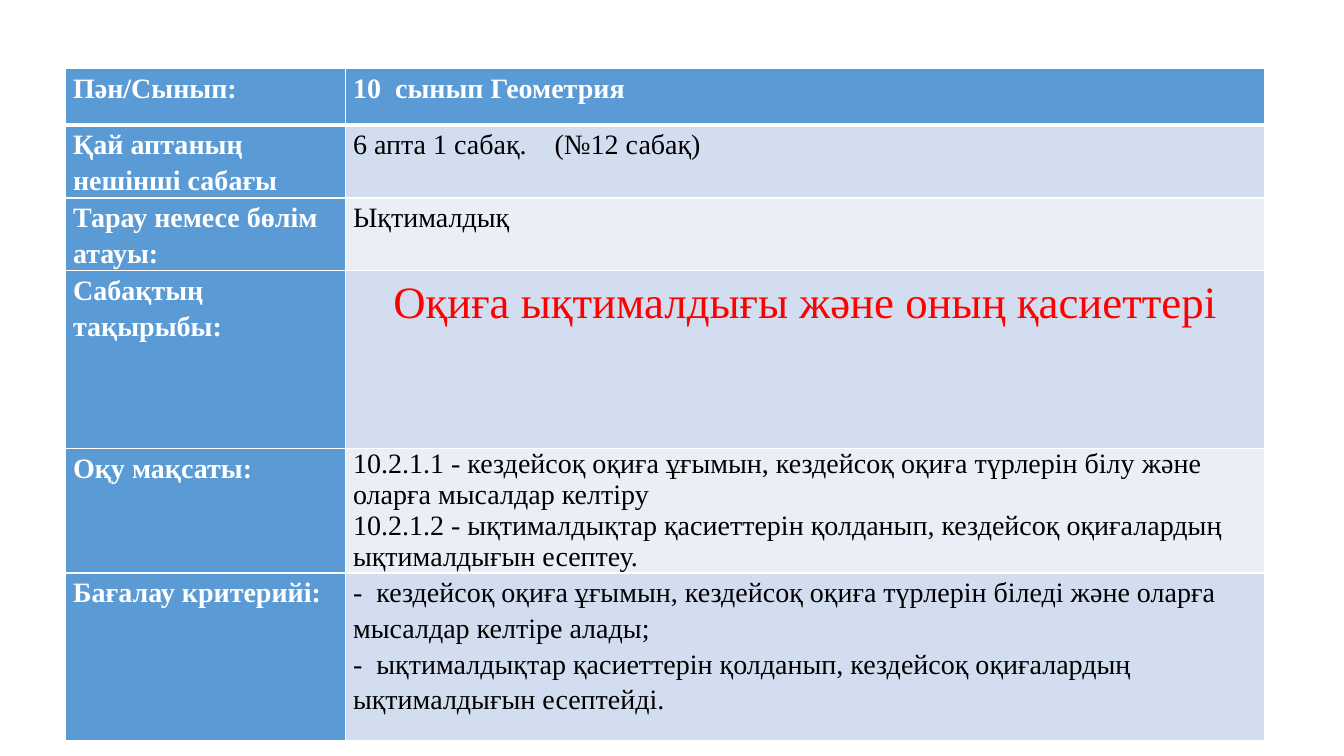
from lxml.etree import SubElement
from pptx import Presentation
from pptx.dml.color import RGBColor
from pptx.enum.text import PP_ALIGN
from pptx.oxml.ns import qn
from pptx.util import Pt

BLUE, WHITE, BLACK, RED = "5B9BD5", "FFFFFF", "000000", "FF0000"
BANDS = ["D2DEEF", "EAEFF7"]
LABEL = dict(bold=True, color=WHITE)
TOPIC = dict(size=32, color=RED, align=PP_ALIGN.CENTER)
ROWS = [
    (40.5, "Пән/Сынып:", ["10  сынып Геометрия"], LABEL),
    (52, "Қай аптаның нешінші сабағы", ["6 апта 1 сабақ.\t(№12 сабақ)"], dict(tab=144)),
    (52, "Тарау немесе бөлім атауы:", ["Ықтималдық"], {}),
    (127, "Сабақтың тақырыбы:", ["Оқиға ықтималдығы және оның қасиеттері"], TOPIC),
    (88.5, "Оқу мақсаты:", [
        "10.2.1.1 - кездейсоқ оқиға ұғымын, кездейсоқ оқиға түрлерін білу және оларға мысалдар келтіру",
        "10.2.1.2 - ықтималдықтар қасиеттерін қолданып, кездейсоқ оқиғалардың ықтималдығын есептеу.",
    ], dict(spacing=1.0)),
    (119.5, "Бағалау критерийі:", [
        "-  кездейсоқ оқиға ұғымын, кездейсоқ оқиға түрлерін біледі және оларға мысалдар келтіре алады;",
        "-  ықтималдықтар қасиеттерін қолданып, кездейсоқ оқиғалардың ықтималдығын есептейді.",
    ], {}),
]


def rgb(value):
    """Turn a hex string into a colour."""
    return RGBColor.from_string(value)


class LessonSlide:
    """Hold the text style and the current slide."""

    font = "Times New Roman"
    margins = dict(margin_left=Pt(5.2), margin_right=Pt(5.2), margin_top=0, margin_bottom=0)

    def __init__(self, prs):
        """Add an empty slide."""
        self.s = prs.slides.add_slide(prs.slide_layouts[6])

    def table(self, left, top, widths, rows):
        """Add the table of labels and contents."""
        height = sum(row[0] for row in rows)
        sp = self.s.shapes.add_table(len(rows), len(widths), Pt(left), Pt(top),
                                     Pt(sum(widths)), Pt(height))
        for column, width in zip(sp.table.columns, widths):
            column.width = Pt(width)
        for i, (height, label, lines, style) in enumerate(rows):
            sp.table.rows[i].height = Pt(height)
            edges = dict(L=1, R=1, T=3 if i == 1 else 1, B=3 if i == 0 else 1)
            fill = BANDS[(i - 1) % 2] if i else BLUE
            self.cell(sp.table.cell(i, 0), [label], BLUE, edges, **LABEL)
            self.cell(sp.table.cell(i, 1), lines, fill, edges, **style)

    def cell(self, cell, lines, fill, edges, **style):
        """Format one cell and write its paragraphs."""
        for name, value in self.margins.items():
            setattr(cell, name, value)
        self.borders(cell, edges)
        cell.fill.solid()
        cell.fill.fore_color.rgb = rgb(fill)
        tf = cell.text_frame
        for i, line in enumerate(lines):
            p = tf.add_paragraph() if i else tf.paragraphs[0]
            self.paragraph(p, line, **style)

    def borders(self, cell, edges):
        """Draw white cell edges with the given widths."""
        tcPr = cell._tc.get_or_add_tcPr()
        for side, width in edges.items():
            ln = SubElement(tcPr, qn(f"a:ln{side}"), w=str(Pt(width)))
            SubElement(SubElement(ln, qn("a:solidFill")), qn("a:srgbClr"), val=WHITE)

    def paragraph(self, p, text, size=20, color=BLACK, bold=False,
                  align=PP_ALIGN.LEFT, spacing=1.15, tab=None):
        """Write one formatted paragraph."""
        p.alignment, p.line_spacing = align, spacing
        if tab:
            stops = SubElement(p._p.get_or_add_pPr(), qn("a:tabLst"))
            SubElement(stops, qn("a:tab"), pos=str(Pt(tab)), algn="l")
        r = p.add_run()
        r.text = text
        for name, value in dict(name=self.font, size=Pt(size), bold=bold).items():
            setattr(r.font, name, value)
        r.font.color.rgb = rgb(color)


def main():
    """Build and save the slide."""
    prs = Presentation()
    prs.slide_width, prs.slide_height = Pt(960), Pt(540)
    LessonSlide(prs).table(47, 49, [200, 656.5], ROWS)
    prs.save("out.pptx")


if __name__ == "__main__":
    main()
